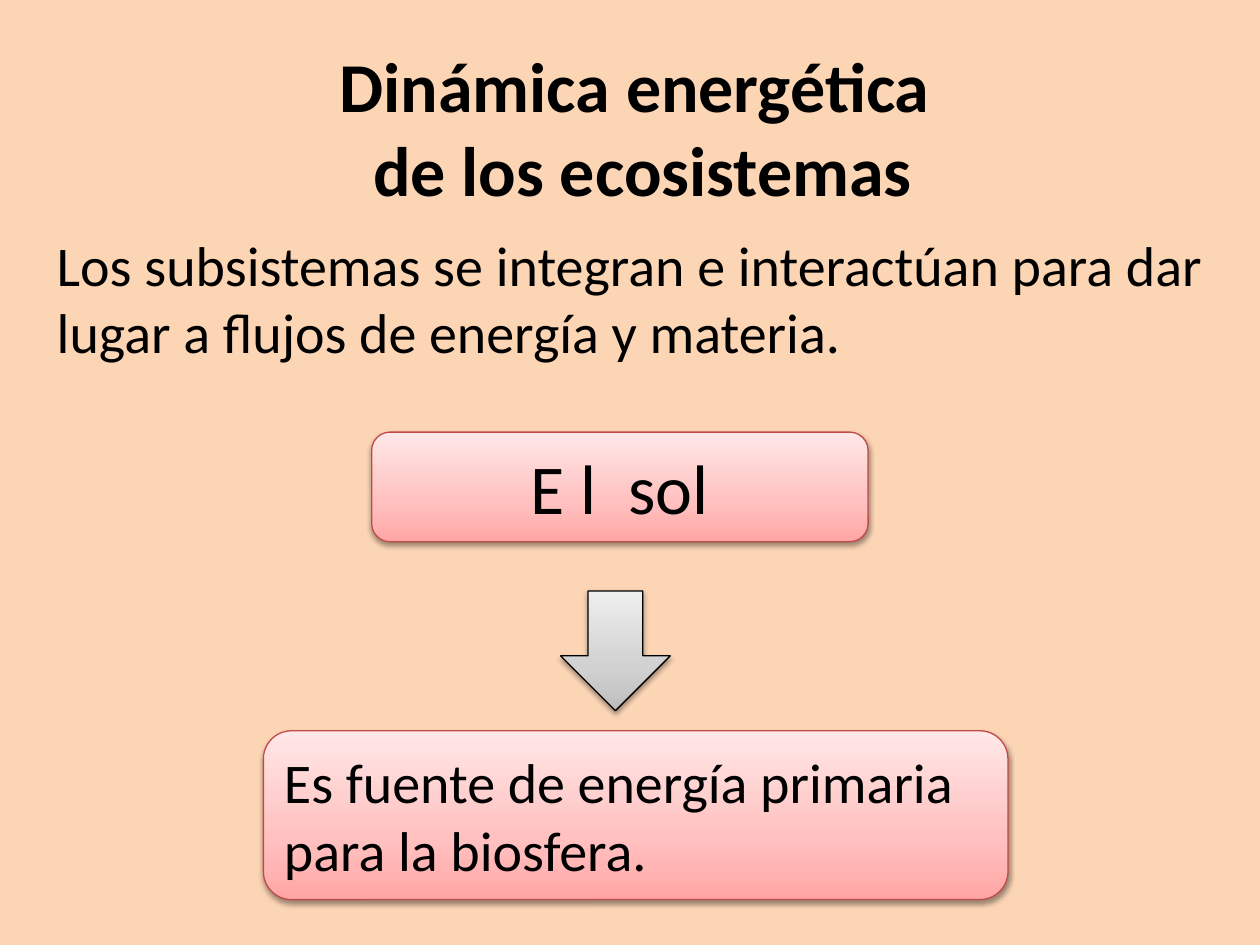
from dataclasses import dataclass

from lxml import etree
from pptx import Presentation
from pptx.dml.color import RGBColor
from pptx.enum.shapes import MSO_SHAPE
from pptx.enum.text import MSO_ANCHOR, MSO_AUTO_SIZE, PP_ALIGN
from pptx.oxml.ns import qn
from pptx.util import Inches, Pt

ROUNDED = MSO_SHAPE.ROUNDED_RECTANGLE
DOWN_ARROW = MSO_SHAPE.DOWN_ARROW
TOP, MIDDLE = MSO_ANCHOR.TOP, MSO_ANCHOR.MIDDLE
LEFT, CENTER, JUSTIFY = PP_ALIGN.LEFT, PP_ALIGN.CENTER, PP_ALIGN.JUSTIFY
NO_AUTOFIT = MSO_AUTO_SIZE.NONE
TITLE_AND_CONTENT = 1


@dataclass(frozen=True)
class Theme:
    font: str = "Calibri"
    large: int = 40
    medium: int = 32
    text: str = "000000"
    background: str = "FCD5B5"
    red_line: str = "BF4C48"
    gray_line: str = "000000"
    red_fill: tuple = ((0, "FFA6A5"), (35, "FFC0BF"), (100, "FFE7E7"))
    gray_fill: tuple = ((0, "BDBDBD"), (35, "D1D1D1"), (100, "EEEEEE"))


THEME = Theme()


def add_color(parent, color):
    return etree.SubElement(parent, qn("a:srgbClr"), val=color)


def place(shape, box):
    for name, value in zip(("left", "top", "width", "height"), box):
        setattr(shape, name, Inches(value))


def write_text(shape, lines, size, align, anchor, bold=False):
    frame = shape.text_frame
    frame_format = {"word_wrap": True, "auto_size": NO_AUTOFIT,
                    "vertical_anchor": anchor}
    for name, value in frame_format.items():
        setattr(frame, name, value)
    font_format = {"name": THEME.font, "size": Pt(size), "bold": bold}
    for index, line in enumerate(lines):
        para = frame.add_paragraph() if index else frame.paragraphs[0]
        para.alignment = align
        para.space_before = Pt(0)
        span = para.add_run()
        span.text = line
        for name, value in font_format.items():
            setattr(span.font, name, value)
        span.font.color.rgb = RGBColor.from_string(THEME.text)


def remove_bullets(shape):
    for para in shape.text_frame.paragraphs:
        properties = para._p.get_or_add_pPr()
        properties.set("marL", "0")
        properties.set("indent", "0")
        etree.SubElement(properties, qn("a:buNone"))


def fill_gradient(shape, stops):
    """Fill with a vertical gradient whose first stop is at the bottom."""
    shape.fill.gradient()
    shape.fill.gradient_angle = 90
    stop_list = shape._element.spPr.find(".//" + qn("a:gsLst"))
    for stop in list(stop_list):
        stop_list.remove(stop)
    for percent, color in stops:
        stop = etree.SubElement(stop_list, qn("a:gs"), pos=str(percent * 1000))
        add_color(stop, color)


def add_soft_shadow(shape):
    shape.shadow.inherit = False
    effects = shape._element.spPr.find(qn("a:effectLst"))
    shadow = etree.SubElement(
        effects, qn("a:outerShdw"), blurRad=str(Pt(3.1)), dist=str(Pt(1.6)),
        dir=str(90 * 60000), rotWithShape="0")
    etree.SubElement(add_color(shadow, "000000"), qn("a:alpha"), val="38000")


def add_gradient_shape(page, preset, box, stops, line_color):
    shape = page.shapes.add_shape(preset, *map(Inches, box))
    fill_gradient(shape, stops)
    shape.line.color.rgb = RGBColor.from_string(line_color)
    shape.line.width = Pt(0.75)
    add_soft_shadow(shape)
    return shape


def add_red_box(page, box, text, size, align):
    shape = add_gradient_shape(page, ROUNDED, box, THEME.red_fill, THEME.red_line)
    write_text(shape, [text], size, align, MIDDLE)


def main():
    deck = Presentation()
    deck.slide_width, deck.slide_height = Inches(10), Inches(7.5)
    page = deck.slides.add_slide(deck.slide_layouts[TITLE_AND_CONTENT])
    page.background.fill.solid()
    page.background.fill.fore_color.rgb = RGBColor.from_string(THEME.background)

    title, body = page.placeholders
    place(title, (2.44, 0.29, 5.32, 1.45))
    write_text(title, ["Dinámica energética ", "de los ecosistemas"],
               THEME.large, CENTER, TOP, bold=True)
    place(body, (0.35, 1.78, 9.3, 1.51))
    write_text(body, ["Los subsistemas se integran e interactúan para dar "
                      "lugar a flujos de energía y materia."],
               THEME.medium, JUSTIFY, TOP)
    remove_bullets(body)

    add_red_box(page, (2.95, 3.43, 3.94, 0.87), "E l  sol", THEME.large, CENTER)
    add_gradient_shape(page, DOWN_ARROW, (4.45, 4.69, 0.87, 0.95),
                       THEME.gray_fill, THEME.gray_line)
    add_red_box(page, (2.09, 5.8, 5.91, 1.34),
                "Es fuente de energía primaria para la biosfera.",
                THEME.medium, LEFT)
    deck.save("out.pptx")


if __name__ == "__main__":
    main()
